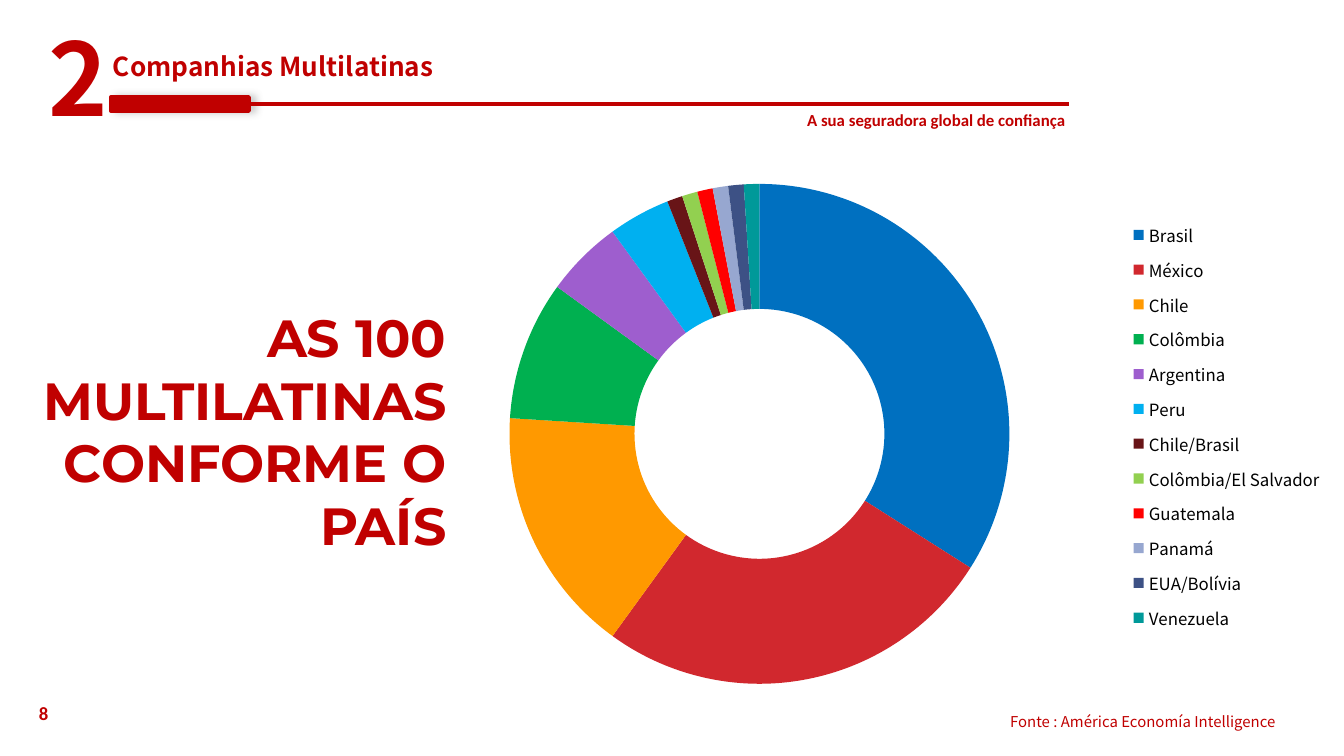
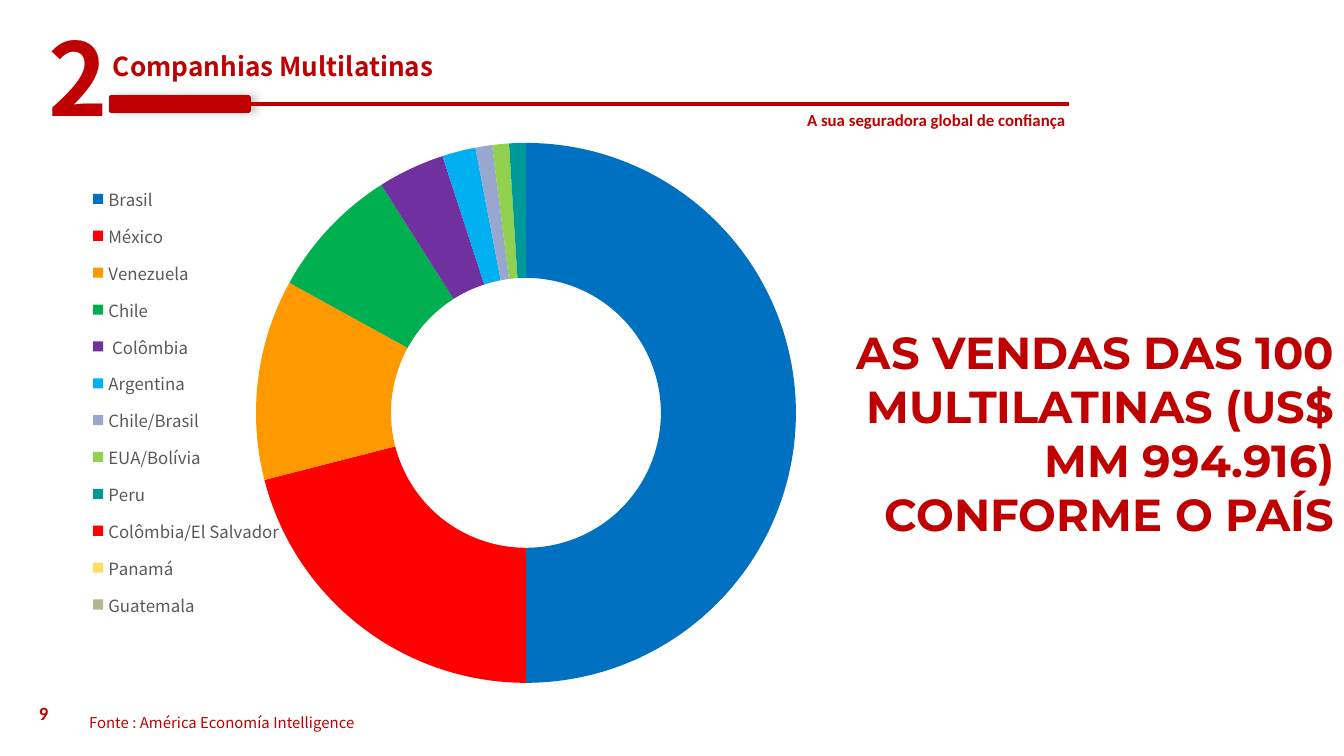
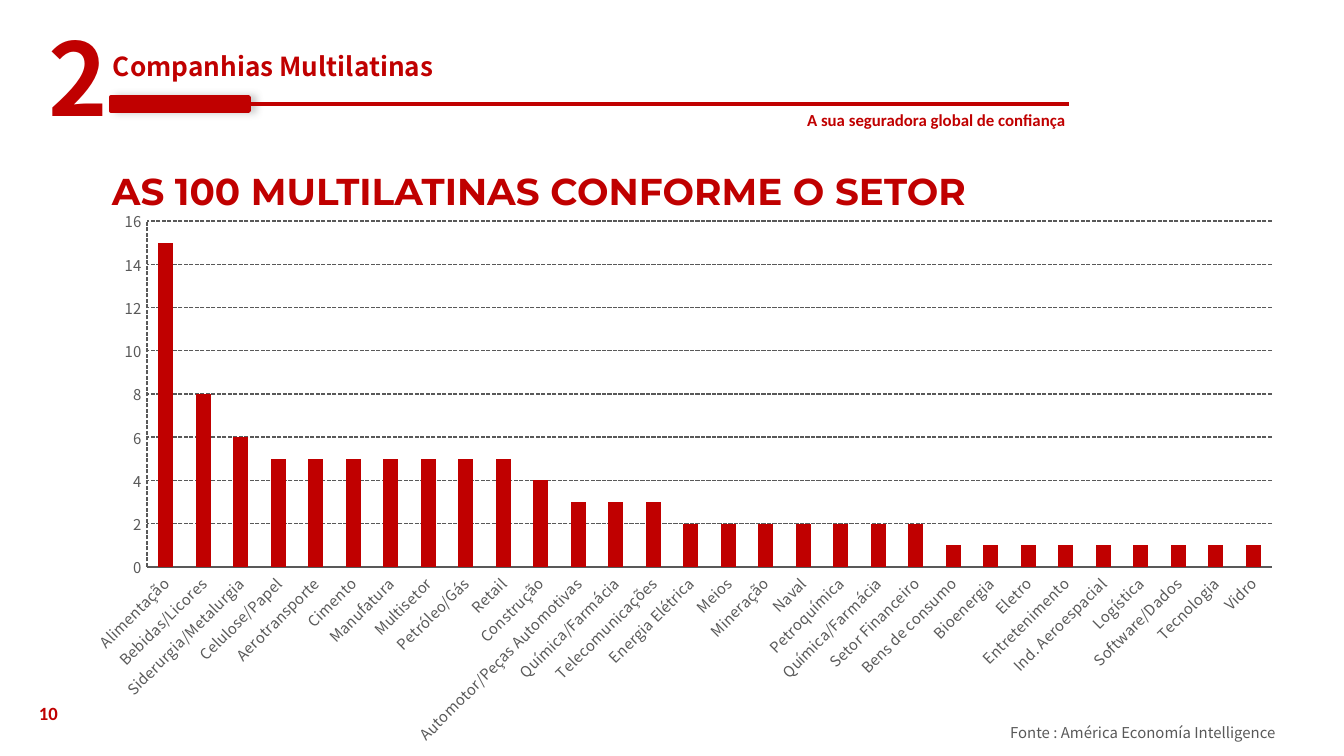
from dataclasses import dataclass

from lxml.etree import SubElement
from pptx import Presentation
from pptx.chart.data import CategoryChartData
from pptx.dml.color import RGBColor
from pptx.enum.chart import XL_CHART_TYPE as ChartType
from pptx.enum.chart import XL_LEGEND_POSITION as LegendPosition
from pptx.enum.chart import XL_TICK_MARK as TickMark
from pptx.enum.dml import MSO_LINE_DASH_STYLE as Dash
from pptx.enum.shapes import MSO_CONNECTOR_TYPE as ConnectorType
from pptx.enum.shapes import MSO_SHAPE as Preset
from pptx.enum.text import MSO_ANCHOR as Anchor
from pptx.enum.text import PP_ALIGN as Align
from pptx.oxml import parse_xml
from pptx.oxml.ns import nsdecls, qn
from pptx.util import Emu, Pt


@dataclass(frozen=True)
class Theme:
    red: str = "C00000"
    gray: str = "595959"
    black: str = "000000"
    body: str = "Noto Sans CJK TC"
    accent: str = "Calibri"
    display: str = "Montserrat"
    number: int = 54
    title: int = 14
    page: int = 10
    tagline: int = 9
    legend: int = 9
    small: int = 8


THEME = Theme()
PX_PER_INCH = 134.4
WIDTH, HEIGHT = 1344, 756
TIGHT = (9, 5)
NORMAL = (13, 7)

SECTION = "2"
TITLE = "Companhias Multilatinas"
TAGLINE = "A sua seguradora global de confiança"
SOURCE = "Fonte : América Economía Intelligence"

COMPANIES = [
    ("Brasil", 34, "0070C0"),
    ("México", 26, "D1282E"),
    ("Chile", 16, "FF9900"),
    ("Colômbia", 9, "00B050"),
    ("Argentina", 5, "9E5ECE"),
    ("Peru", 4, "00B0F0"),
    ("Chile/Brasil", 1, "681417"),
    ("Colômbia/El Salvador", 1, "92D050"),
    ("Guatemala", 1, "FF0000"),
    ("Panamá", 1, "97A7D0"),
    ("EUA/Bolívia", 1, "3D5185"),
    ("Venezuela", 1, "009999"),
]
SALES = [
    ("Brasil", 50, "0070C0"),
    ("México", 21, "FF0000"),
    ("Venezuela", 12, "FF9900"),
    ("Chile", 8, "00B050"),
    (" Colômbia", 4, "7030A0"),
    ("Argentina", 2, "00B0F0"),
    ("Chile/Brasil", 1, "97A7D0"),
    ("EUA/Bolívia", 1, "92D050"),
    ("Peru", 1, "009999"),
    ("Colômbia/El Salvador", 0, "FF0000"),
    ("Panamá", 0, "FEDE61"),
    ("Guatemala", 0, "B4B392"),
]
SECTORS = [
    (15, ["Alimentação"]),
    (8, ["Bebidas/Licores"]),
    (6, ["Siderurgia/Metalurgia"]),
    (5, ["Celulose/Papel", "Aerotransporte", "Cimento", "Manufatura",
         "Multisetor", "Petróleo/Gás", "Retail"]),
    (4, ["Construção"]),
    (3, ["Automotor/Peças Automotivas", "Química/Farmácia", "Telecomunicações"]),
    (2, ["Energia Elétrica", "Meios", "Mineração", "Naval", "Petroquímica",
         "Química/Farmácia", "Setor Financeiro"]),
    (1, ["Bens de consumo", "Bioenergia", "Eletro", "Entretenimento",
         "Ind. Aeroespacial", "Logística", "Software/Dados", "Tecnologia", "Vidro"]),
]


def px(length):
    return Emu(round(length * 914400 / PX_PER_INCH))


def frame(*lengths):
    return [px(length) for length in lengths]


def color(code):
    return RGBColor.from_string(code)


def set_font(font, size, code, name, bold=False):
    font.size, font.name, font.bold = Pt(size), name, bold
    font.color.rgb = color(code)


def add_text(page, text, place, *, size, code=THEME.red, name=THEME.body, bold=True,
             align=Align.LEFT, anchor=Anchor.MIDDLE, insets=TIGHT, arrow=None):
    if arrow:
        box = page.shapes.add_shape(Preset.RIGHT_ARROW, *frame(*place))
        box.adjustments[0], box.adjustments[1] = arrow
        box.fill.background()
        box.line.fill.background()
        box.shadow.inherit = False
    else:
        box = page.shapes.add_textbox(*frame(*place))
    body = box.text_frame
    body.word_wrap, body.vertical_anchor = True, anchor
    body.margin_left = body.margin_right = px(insets[0])
    body.margin_top = body.margin_bottom = px(insets[1])
    para = body.paragraphs[0]
    para.alignment = align
    span = para.add_run()
    span.text = text
    set_font(span.font, size, code, name, bold)


def add_band(page):
    band = page.shapes.add_shape(Preset.RECTANGLE, *frame(111, 97, 138, 14))
    band.fill.solid()
    band.fill.fore_color.rgb = color(THEME.red)
    band.line.color.rgb = color(THEME.red)
    band.line.width = Pt(2)
    properties = band._element.spPr
    properties.append(parse_xml(
        f'<a:effectLst {nsdecls("a")}><a:outerShdw blurRad="{Pt(4)}" dist="{Pt(3)}" dir="0">'
        '<a:srgbClr val="808080"><a:alpha val="40000"/></a:srgbClr>'
        '</a:outerShdw></a:effectLst>'))
    rule = page.shapes.add_connector(ConnectorType.STRAIGHT, *frame(249, 104, 1069, 104))
    rule.begin_connect(band, 3)
    rule.line.color.rgb = color(THEME.red)
    rule.line.width = Pt(2.25)
    SubElement(rule._element.spPr, qn("a:effectLst"))


def add_page(deck, number):
    page = deck.slides.add_slide(deck.slide_layouts[6])
    add_band(page)
    add_text(page, TAGLINE, (555, 103, 523, 34), size=THEME.tagline, name=THEME.accent,
             align=Align.RIGHT, anchor=Anchor.TOP, insets=NORMAL)
    add_text(page, str(number), (26, 695, 313, 40), size=THEME.page, name=THEME.accent,
             anchor=Anchor.TOP, insets=NORMAL)
    add_text(page, TITLE, (104, 46, 1050, 41), size=THEME.title)
    add_text(page, SECTION, (40, 1, 80, 150), size=THEME.number)
    return page


def add_source(page, left, top, align=Align.RIGHT, code=THEME.red):
    add_text(page, SOURCE, (left, top, 638, 32), size=THEME.small, code=code, bold=False,
             align=align, anchor=Anchor.TOP, insets=NORMAL)


def set_layout(parent, index, place, chart_place, inner=False):
    for layout in parent.findall(qn("c:layout")):
        parent.remove(layout)
    left, top, width, height = place
    chart_left, chart_top, chart_width, chart_height = chart_place
    shares = {"x": (left - chart_left) / chart_width, "y": (top - chart_top) / chart_height,
              "w": width / chart_width, "h": height / chart_height}
    target = '<c:layoutTarget val="inner"/>' if inner else ""
    modes = "".join(f'<c:{axis}Mode val="edge"/>' for axis in "xy")
    sizes = "".join(f'<c:{key} val="{share:.5f}"/>' for key, share in shares.items())
    parent.insert(index, parse_xml(
        f'<c:layout {nsdecls("c")}><c:manualLayout>{target}{modes}{sizes}'
        '</c:manualLayout></c:layout>'))


def add_chart(page, kind, place, names, values, plot_place):
    data = CategoryChartData()
    data.categories = names
    data.add_series("Series 1", values)
    chart = page.shapes.add_chart(kind, *frame(*place), data).chart
    chart.has_title = chart.has_legend = False
    set_font(chart.font, THEME.small, THEME.gray, THEME.body)
    set_layout(chart._chartSpace.chart.plotArea, 0, plot_place, place, inner=True)
    return chart


def add_doughnut(page, slices, place, plot_place, legend_place, legend_code):
    names, values, codes = zip(*slices)
    chart = add_chart(page, ChartType.DOUGHNUT, place, names, values, plot_place)
    plot = chart.plots[0]
    plot.vary_by_categories = True
    for index, code in enumerate(codes):
        fill = plot.series[0].points[index].format.fill
        fill.solid()
        fill.fore_color.rgb = color(code)
    chart.has_legend = True
    legend = chart.legend
    legend.position = LegendPosition.RIGHT
    legend.include_in_layout = False
    set_font(legend.font, THEME.legend, legend_code, THEME.body)
    set_layout(legend._element, 1, legend_place, place)


def style_line(line, dash=None):
    line.color.rgb = color(THEME.gray)
    line.width = Pt(0.75)
    if dash:
        line.dash_style = dash


def add_columns(page, groups, place, plot_place):
    names = [name for _, group in groups for name in group]
    values = [value for value, group in groups for _ in group]
    chart = add_chart(page, ChartType.COLUMN_CLUSTERED, place, names, values, plot_place)
    plot = chart.plots[0]
    plot.vary_by_categories, plot.gap_width = False, 150
    fill = plot.series[0].format.fill
    fill.solid()
    fill.fore_color.rgb = color(THEME.red)
    sectors, counts = chart.category_axis, chart.value_axis
    for axis, dash in ((sectors, None), (counts, Dash.SQUARE_DOT)):
        axis.major_tick_mark = axis.minor_tick_mark = TickMark.NONE
        set_font(axis.tick_labels.font, THEME.small, THEME.gray, THEME.body)
        style_line(axis.format.line, dash)
    sectors._element.find(qn("c:txPr")).find(qn("a:bodyPr")).set("rot", "-2700000")
    counts.minimum_scale, counts.maximum_scale, counts.major_unit = 0, 16, 2
    counts.has_major_gridlines = True
    style_line(counts.major_gridlines.format.line, Dash.SQUARE_DOT)


def add_companies(deck):
    page = add_page(deck, 8)
    add_text(page, "AS 100 MULTILATINAS CONFORME O PAÍS", (-3, 93, 917, 675), size=28,
             name=THEME.display, align=Align.RIGHT, arrow=(0.5, 2.44))
    add_doughnut(page, COMPANIES, (340, 66, 1004, 640), (498, 184, 523, 500),
                 (1126, 212, 201, 429), THEME.black)
    add_source(page, 651, 706)


def add_sales(deck):
    page = add_page(deck, 9)
    add_doughnut(page, SALES, (58, 124, 1144, 578), (256, 143, 540, 540),
                 (89, 174, 194, 456), THEME.gray)
    add_text(page, "AS VENDAS DAS 100 MULTILATINAS (US$ MM 994.916) CONFORME O PAÍS",
             (777, 319, 566, 227), size=24, name=THEME.display, align=Align.RIGHT)
    add_source(page, 76, 707, align=Align.LEFT)


def add_sectors(deck):
    page = add_page(deck, 10)
    add_columns(page, SECTORS, (70, 198, 1227, 558), (147, 221, 1125, 346))
    add_source(page, 651, 717, code=THEME.gray)
    add_text(page, "AS 100 MULTILATINAS CONFORME O SETOR", (103, -57, 941, 496), size=20,
             name=THEME.display, arrow=(0, 1.54))


def main():
    deck = Presentation()
    deck.slide_width, deck.slide_height = frame(WIDTH, HEIGHT)
    for add_slide in (add_companies, add_sales, add_sectors):
        add_slide(deck)
    deck.save("out.pptx")


if __name__ == "__main__":
    main()
